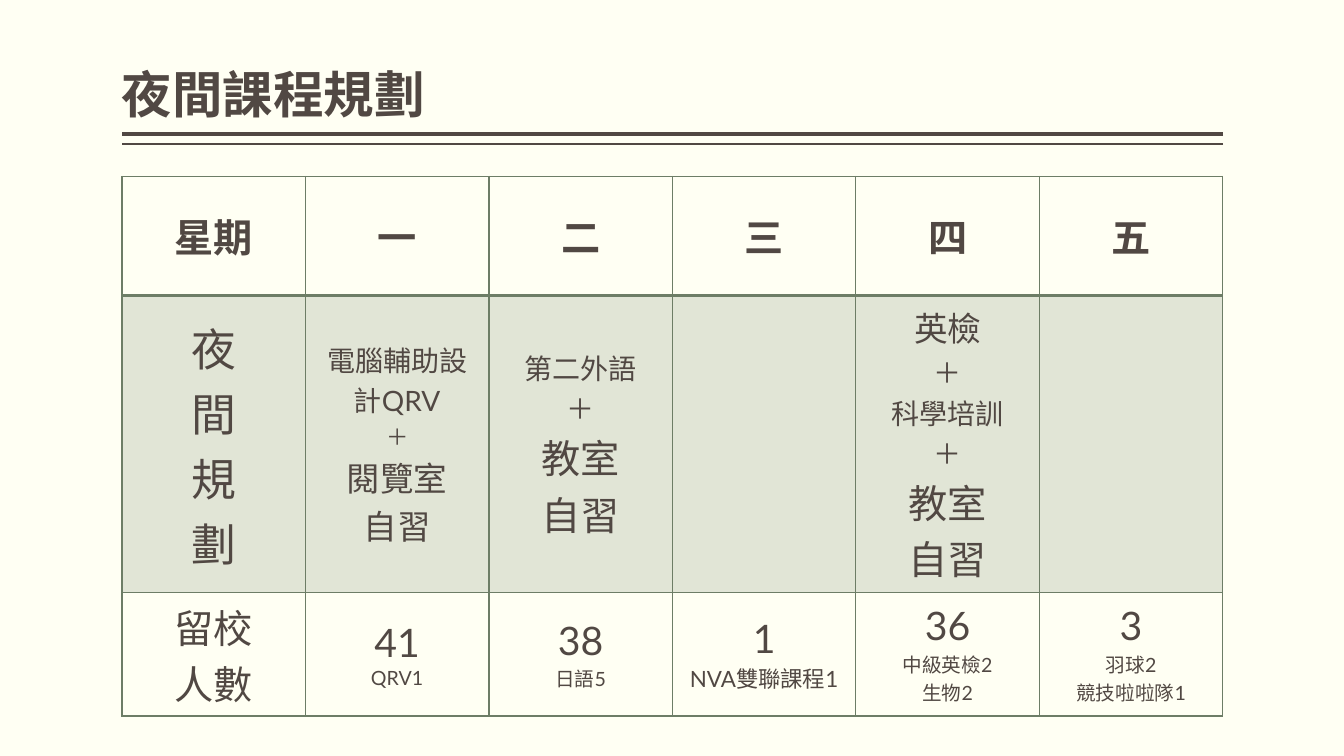
from lxml.etree import SubElement
from pptx import Presentation
from pptx.dml.color import RGBColor
from pptx.enum.shapes import MSO_CONNECTOR
from pptx.enum.text import MSO_ANCHOR, MSO_AUTO_SIZE, PP_ALIGN
from pptx.oxml.ns import qn
from pptx.util import Inches, Pt

COLORS = {"background": "FFFFF3", "text": "514843", "green": "6D7D66"}
LATIN_FONT, CHINESE_FONT = "Lato", "Noto Sans CJK TC"
LEFT, WIDTH = 1.21, 10.92
ROW_HEIGHTS = [1.18, 2.95, 1.18]

# Each cell is a list of (text, size) paragraphs
HEADER = [[(day, 28)] for day in ["星期", "一", "二", "三", "四", "五"]]
COURSES = [
    [(character, 32) for character in "夜間規劃"],
    [("電腦輔助設計QRV", 20), ("＋", 16), ("閱覽室", 24), ("自習", 24)],
    [("第二外語", 20), ("＋", 20), ("教室", 28), ("自習", 28)],
    [],
    [("英檢", 24), ("＋", 20), ("科學培訓", 20), ("＋", 20), ("教室", 28), ("自習", 28)],
    [],
]
HEADCOUNT = [
    [("留校", 28), ("人數", 28)],
    [("41", 28), ("QRV1", 14)],
    [("38", 28), ("日語5", 14)],
    [("1", 28), ("NVA雙聯課程1", 16)],
    [("36", 28), ("中級英檢2", 14), ("生物2", 14)],
    [("3", 28), ("羽球2", 14), ("競技啦啦隊1", 14)],
]


def color(name):
    return RGBColor.from_string(COLORS[name])


class SlideBuilder:
    def __init__(self, presentation):
        self.slide = presentation.slides.add_slide(presentation.slide_layouts[5])
        fill = self.slide.background.fill
        fill.solid()
        fill.fore_color.rgb = color("background")

    def add_run(self, paragraph, text, size, bold=False, latin=LATIN_FONT):
        run = paragraph.add_run()
        run.text = text
        run.font.name = latin
        run.font.size = Pt(size)
        run.font.bold = bold
        run.font.color.rgb = color("text")
        SubElement(run.font._element, qn("a:ea"), typeface=CHINESE_FONT)

    def title(self, text, left, top, width, height):
        shape = self.slide.shapes.title
        shape.left, shape.top = Inches(left), Inches(top)
        shape.width, shape.height = Inches(width), Inches(height)
        frame = shape.text_frame
        frame.auto_size = MSO_AUTO_SIZE.NONE
        frame.vertical_anchor = MSO_ANCHOR.BOTTOM
        frame.margin_left = frame.margin_right = 0
        paragraph = frame.paragraphs[0]
        paragraph.alignment = PP_ALIGN.LEFT
        self.add_run(paragraph, text, 36, bold=True, latin=CHINESE_FONT)

    def rule(self, y, weight):
        line = self.slide.shapes.add_connector(
            MSO_CONNECTOR.STRAIGHT,
            Inches(LEFT + WIDTH), Inches(y), Inches(LEFT), Inches(y))
        line.line.color.rgb = color("text")
        line.line.width = Pt(weight)
        SubElement(line._element.spPr, qn("a:effectLst"))

    def borders(self, cell, bottom, top):
        properties = cell._tc.get_or_add_tcPr()
        weights = {"lnL": 1, "lnR": 1, "lnT": top, "lnB": bottom}
        for index, (side, weight) in enumerate(weights.items()):
            border = properties.makeelement(qn(f"a:{side}"), {"w": str(Pt(weight))})
            fill = SubElement(border, qn("a:solidFill"))
            SubElement(fill, qn("a:srgbClr"), val=COLORS["green"])
            properties.insert(index, border)

    def cell(self, cell, paragraphs, header, shaded):
        cell.vertical_anchor = MSO_ANCHOR.MIDDLE
        if shaded:
            cell.fill.solid()
            cell.fill.fore_color.rgb = color("green")
            tint = cell._tc.tcPr.find(".//" + qn("a:srgbClr"))
            SubElement(tint, qn("a:alpha"), val="20000")
        else:
            cell.fill.background()
        frame = cell.text_frame
        for index, (text, size) in enumerate(paragraphs):
            paragraph = frame.add_paragraph() if index else frame.paragraphs[0]
            paragraph.alignment = PP_ALIGN.CENTER
            if header:
                paragraph.space_before = Pt(size * 0.2)
            self.add_run(paragraph, text, size, bold=header)

    def table(self, rows, left, top, width, heights):
        table = self.slide.shapes.add_table(
            len(rows), len(rows[0]), Inches(left), Inches(top),
            Inches(width), Inches(sum(heights))).table
        table.horz_banding = False
        for row, height in enumerate(heights):
            table.rows[row].height = Inches(height)
            for column, paragraphs in enumerate(rows[row]):
                cell = table.cell(row, column)
                self.cell(cell, paragraphs, header=row == 0, shaded=row == 1)
                self.borders(cell, bottom=2 if row == 0 else 1, top=2 if row == 1 else 1)


def main():
    presentation = Presentation()
    presentation.slide_width = Inches(13.33)
    presentation.slide_height = Inches(7.5)
    builder = SlideBuilder(presentation)

    # Heading with its double rule
    builder.rule(1.33, 3)
    builder.rule(1.43, 1)
    builder.title("夜間課程規劃", LEFT, 0.08, WIDTH, 1.2)

    # Weekly timetable
    builder.table([HEADER, COURSES, HEADCOUNT], LEFT, 1.75, WIDTH, ROW_HEIGHTS)

    presentation.save("out.pptx")


if __name__ == "__main__":
    main()
